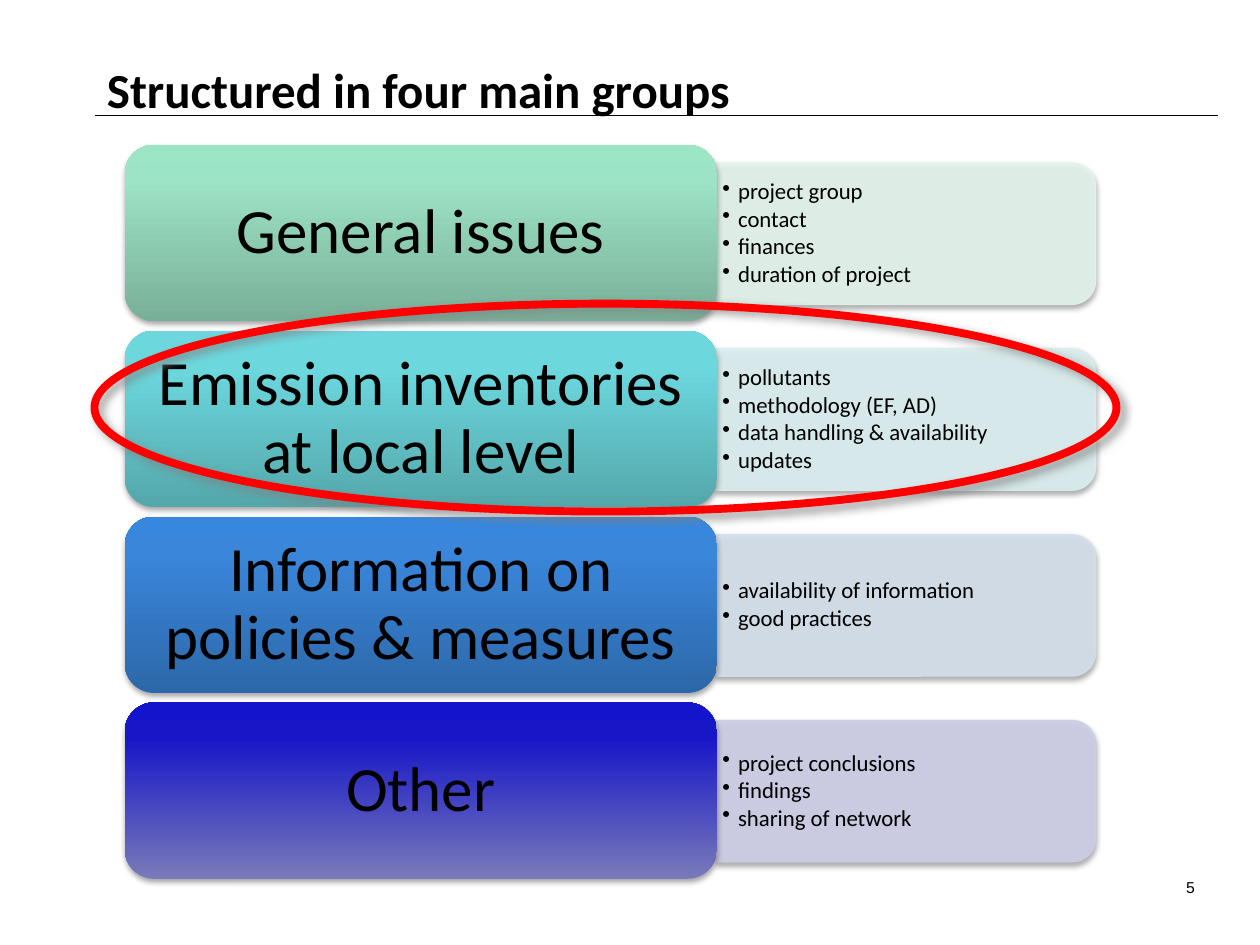
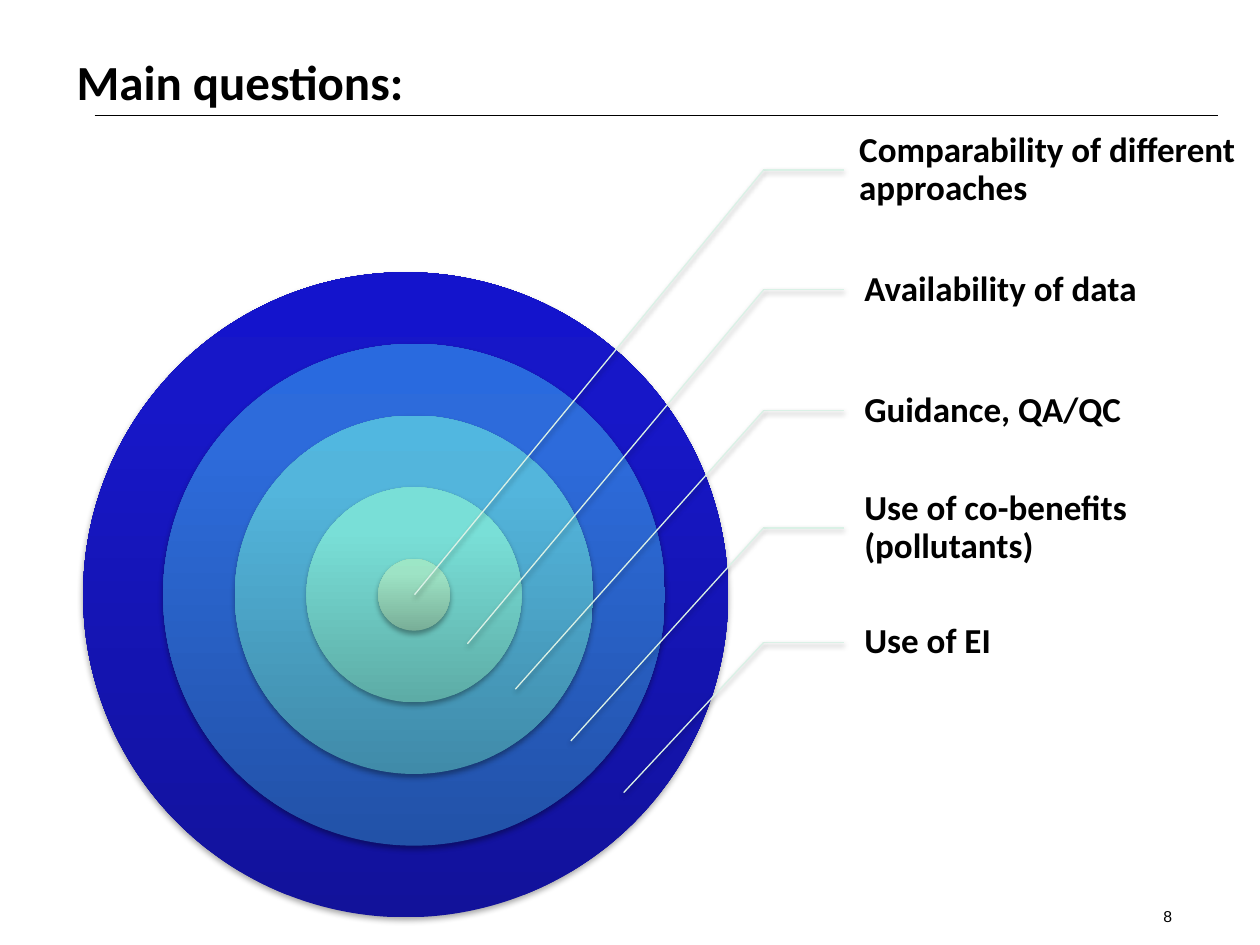
from lxml import etree
from pptx import Presentation
from pptx.dml.color import RGBColor
from pptx.enum.shapes import MSO_CONNECTOR as Link, MSO_SHAPE as Kind
from pptx.enum.text import MSO_ANCHOR as Anchor, PP_ALIGN as Align
from pptx.oxml.ns import qn
from pptx.util import Pt

# Content
HEX = {
    "ink": "000000", "mark": "FF0000", "gray": "808080", "lead": "DAF1E6",
}
MINT = ("79AF98", "9DE3C5", "9CE6C6")
GROUPS = [
    ("General issues", MINT, "E2F4EC",
     ["project group", "contact", "finances", "duration of project"]),
    ("Emission inventories at local level",
     ("54A7AB", "6CD8DE", "6BDBE1"), "DBEFF0",
     ["pollutants", "methodology (EF, AD)",
      "data handling & availability", "updates"]),
    ("Information on policies & measures",
     ("2C68A9", "3A86DB", "3787DF"), "D4DFEB",
     ["availability of information", "good practices"]),
    ("Other", ("7979B9", "1717C8", "1414CC"), "CDCDE6",
     ["project conclusions", "findings", "sharing of network"]),
]
# Rings from the outside in: centre x, shades
RINGS = [
    (231.8, ("12129A", "1717C8", "1414CC")),
    (236.6, ("2252A8", "2D6BDB", "296ADF")),
    (236.6, ("408BA9", "53B5DC", "51B7E0")),
    (236.6, ("5DACA6", "79DFD7", "77E2DA")),
    (236.6, MINT),
]
# Question, text left and width, height of its line, point in the ring
ASKS = [
    ("Comparability of different approaches", 479.5, 249, 97.2, (236.9, 339.8)),
    ("Availability of data", 482.4, 184.3, 165.6, (267.1, 367.9)),
    ("Guidance, QA/QC", 482.4, 184.3, 234.7, (294.5, 393.8)),
    ("Use of co-benefits (pollutants)", 482.4, 184.3, 301.7, (326.2, 423.4)),
    ("Use of EI", 482.4, 184.3, 367.2, (356.4, 452.9)),
]


# Drawing helpers
def tint(name):
    return RGBColor.from_string(HEX.get(name, name))


def sub(node, tag, **attrs):
    return etree.SubElement(node, qn(tag), attrs)


def cast(shape, hue="ink", alpha=35, blur=3.1, dist=1.8, turn=90):
    """Give a shape or line an outer shadow."""
    props = shape._element.spPr
    glow = sub(sub(props, "a:effectLst"), "a:outerShdw",
               blurRad=str(Pt(blur)), dist=str(Pt(dist)),
               dir=str(turn * 60000), algn="ctr", rotWithShape="0")
    shade = sub(glow, "a:srgbClr", val=HEX[hue])
    sub(shade, "a:alpha", val=str(alpha * 1000))


def blend(shape, shades):
    """Fill from the bottom up with three shades, without an outline."""
    shape.fill.gradient()
    shape.fill.gradient_angle = 90
    stops = shape._element.spPr.find(".//" + qn("a:gsLst"))
    for stop in list(stops):
        stops.remove(stop)
    for spot, shade in zip((0, 80, 100), shades):
        stop = sub(stops, "a:gs", pos=str(spot * 1000))
        sub(stop, "a:srgbClr", val=shade)
    shape.line.fill.background()
    cast(shape)


def put(slide, kind, x, y, w, h):
    return slide.shapes.add_shape(kind, Pt(x), Pt(y), Pt(w), Pt(h))


def rule(slide, start, end, hue):
    line = slide.shapes.add_connector(
        Link.STRAIGHT, *(Pt(v) for v in (*start, *end)))
    line.line.color.rgb = tint(hue)
    line.line.width = Pt(0.75)
    return line


def write(shape, lines, size, face="Calibri", bold=False, align=Align.LEFT,
          anchor=Anchor.MIDDLE, pads=(7.2, 3.6, 7.2, 3.6), pitch=1.0,
          dots=False):
    frame = shape.text_frame
    frame.word_wrap = True
    frame.vertical_anchor = anchor
    (frame.margin_left, frame.margin_top,
     frame.margin_right, frame.margin_bottom) = (Pt(v) for v in pads)
    for i, text in enumerate(lines):
        para = frame.add_paragraph() if i else frame.paragraphs[0]
        para.alignment = align
        para.line_spacing = pitch
        if dots:
            para.space_after = Pt(1.75)
            props = para._p.get_or_add_pPr()
            props.set("marL", str(Pt(9)))
            props.set("indent", str(-Pt(9)))
            sub(props, "a:buChar", char="•")
        run = para.add_run()
        run.text = text
        run.font.size, run.font.name, run.font.bold = Pt(size), face, bold
        run.font.color.rgb = tint("ink")


def label(slide, x, y, w, h, lines, size, **style):
    box = slide.shapes.add_textbox(Pt(x), Pt(y), Pt(w), Pt(h))
    write(box, lines, size, **style)


def start(deck, title, spot, page, page_spot):
    """Add a slide with its title, rule and page number."""
    slide = deck.slides.add_slide(deck.slide_layouts[6])
    line = rule(slide, (54, 66.2), (696.2, 66.2), "ink")
    sub(line._element.spPr, "a:effectLst")
    label(slide, *spot, [title], 28, bold=True, anchor=Anchor.BOTTOM)
    label(slide, *page_spot, 149.8, 18, [page], 9, face="Arial",
          align=Align.RIGHT, anchor=Anchor.TOP)
    return slide


# Slide with the four groups
def draw_groups(deck):
    slide = start(deck, "Structured in four main groups",
                  (54, 20.9, 584.6, 50.4), "5", (540, 498.2))
    top, step, high = 82.8, 106.2, 100.8
    left, wide = 71.3, 338.4
    tab_x, tab_w, tab_h, text_h = 409.2, 216.9, 80.8, 72.8
    for i, (name, shades, pale, points) in enumerate(GROUPS):
        y = top + i * step
        mid = y + high / 2 + 0.4
        tab = put(slide, Kind.ROUND_2_SAME_RECTANGLE,
                  tab_x + (tab_w - tab_h) / 2, mid - tab_w / 2, tab_h, tab_w)
        tab.rotation = 90
        tab.fill.solid()
        tab.fill.fore_color.rgb = tab.line.color.rgb = tint(pale)
        tab.line.width = Pt(0.75)
        for shade in list(tab._element.spPr.iter(qn("a:srgbClr"))):
            sub(shade, "a:alpha", val="90000")
        cast(tab)
        label(slide, tab_x, mid - text_h / 2, 213, text_h, points, 13,
              pads=(3.6, 2, 3.6, 2), pitch=0.9, dots=True)
        head = put(slide, Kind.ROUNDED_RECTANGLE, left, y, wide, high)
        blend(head, shades)
        write(head, [name], 36, align=Align.CENTER, pitch=0.9,
              pads=(10.8, 5, 10.8, 5))

    # Oval around the second group
    oval = put(slide, Kind.OVAL, 54, 173.5, 584, 118.8)
    oval.fill.background()
    oval.line.color.rgb = tint("mark")
    oval.line.width = Pt(4.5)
    cast(oval, "gray", 75, 5, 3, 45)


# Slide with the rings
def draw_rings(deck):
    slide = start(deck, "Main questions:", (36.7, 9.4, 391, 56.9),
                  "8", (527, 514.8))
    mid, core, grow = 339.9, 41, 81.9
    for i, (x, shades) in enumerate(RINGS):
        size = core + grow * (len(RINGS) - 1 - i)
        ring = put(slide, Kind.OVAL, x - size / 2, mid - size / 2, size, size)
        blend(ring, shades)

    # Questions with their bent leader lines
    bend, tip, high = 436.3, 482.4, 64.8
    for text, x, wide, y, goal in ASKS:
        label(slide, x, y - high / 2, wide, high, [text], 20, bold=True,
              pads=(11.5, 2, 2, 2), pitch=0.9)
        for end in ((tip, y), goal):
            cast(rule(slide, (bend, y), end, "lead"),
                 alpha=38, dist=1.6)


def main():
    deck = Presentation()
    deck.slide_width, deck.slide_height = Pt(720), Pt(540)
    draw_groups(deck)
    draw_rings(deck)
    deck.save("out.pptx")


if __name__ == "__main__":
    main()
